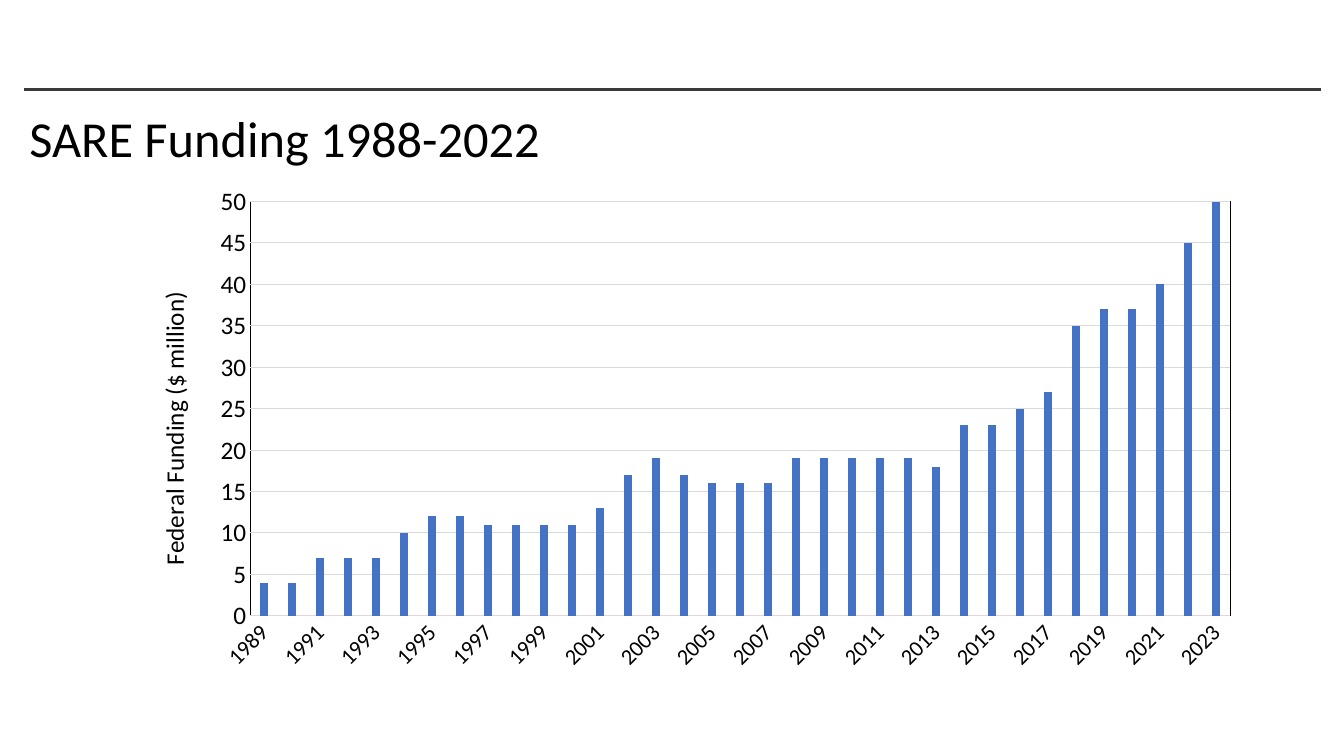
from dataclasses import dataclass

from lxml import etree
from pptx import Presentation
from pptx.chart.data import CategoryChartData
from pptx.dml.color import RGBColor
from pptx.enum.chart import XL_CHART_TYPE as ChartType, XL_TICK_MARK as TickMark
from pptx.enum.shapes import MSO_CONNECTOR as Connector
from pptx.enum.text import MSO_ANCHOR as Anchor, MSO_AUTO_SIZE as AutoSize, PP_ALIGN as Align
from pptx.oxml import parse_xml
from pptx.oxml.ns import nsdecls, qn
from pptx.util import Inches, Pt


@dataclass(frozen=True)
class Theme:
    font: str = "Calibri"
    ink: str = "000000"
    rule: str = "3B3838"
    grid: str = "D9D9D9"
    bar: str = "4472C4"
    title_size: int = 36
    axis_size: int = 18
    year_size: int = 16
    chart_size: int = 10
    thin: float = 0.75
    thick: float = 2.25


THEME = Theme()

CHART_WIDTH, CHART_HEIGHT = 11.08, 5.01
FIRST_YEAR = 1989
FUNDING = [
    4, 4, 7, 7, 7, 10, 12, 12, 11, 11, 11, 11,
    13, 17, 19, 17, 16, 16, 16, 19, 19, 19, 19, 19,
    18, 23, 23, 25, 27, 35, 37, 37, 40, 45, 50,
]


def style_font(font, size, color=THEME.ink, bold=False):
    font.name = THEME.font
    font.size = Pt(size)
    font.bold = bold
    font.color.rgb = RGBColor.from_string(color)


def style_line(line, color, width):
    line.color.rgb = RGBColor.from_string(color)
    line.width = Pt(width)


def write_text(frame, text, *, size, color=THEME.ink, align=None, spacing=None):
    para = frame.paragraphs[0]
    para.alignment = align
    para.line_spacing = spacing
    span = para.add_run()
    span.text = text
    style_font(span.font, size, color)


def add_rule(page, left, right, top):
    rule = page.shapes.add_connector(
        Connector.STRAIGHT, Inches(left), Inches(top), Inches(right), Inches(top))
    style_line(rule.line, THEME.rule, THEME.thick)
    etree.SubElement(rule._element.spPr, qn("a:effectLst"))


def add_title(page, text, left, top, width, height):
    title = page.shapes.title
    title.left, title.top = Inches(left), Inches(top)
    title.width, title.height = Inches(width), Inches(height)
    frame = title.text_frame
    frame.word_wrap = True
    frame.auto_size = AutoSize.NONE
    frame.vertical_anchor = Anchor.MIDDLE
    write_text(frame, text, size=THEME.title_size, align=Align.LEFT, spacing=0.9)


def manual_layout(target="", **places):
    """Build a chart layout from x, y, w and h in inches within the chart."""
    extent = {"x": CHART_WIDTH, "w": CHART_WIDTH, "y": CHART_HEIGHT, "h": CHART_HEIGHT}
    inner = f'<c:layoutTarget val="{target}"/>' if target else ""
    inner += "".join(f'<c:{key}Mode val="edge"/>' for key in "xy")
    inner += "".join(f'<c:{key} val="{value / extent[key]:.4f}"/>'
                     for key, value in places.items())
    return parse_xml(f'<c:layout {nsdecls("c")}><c:manualLayout>{inner}'
                     "</c:manualLayout></c:layout>")


def place_plot(chart):
    plot_area = chart._chartSpace.chart.plotArea
    for layout in plot_area.findall(qn("c:layout")):
        plot_area.remove(layout)
    plot_area.insert(0, manual_layout("inner", x=1.15, y=0.26, w=9.72, h=4.11))
    plot_area.append(parse_xml(
        f'<c:spPr {nsdecls("c", "a")}><a:noFill/><a:ln w="{Pt(THEME.thin)}"><a:solidFill>'
        f'<a:srgbClr val="{THEME.ink}"/></a:solidFill></a:ln></c:spPr>'))


def style_year_axis(axis):
    axis.major_tick_mark = axis.minor_tick_mark = TickMark.NONE
    style_line(axis.format.line, THEME.grid, THEME.thin)
    style_font(axis.tick_labels.font, THEME.year_size)
    # Slant the labels and show every second year
    axis._element.find(qn("c:txPr")).find(qn("a:bodyPr")).set("rot", "-2700000")
    skip = parse_xml(f'<c:tickLblSkip {nsdecls("c")} val="2"/>')
    axis._element.find(qn("c:noMultiLvlLbl")).addprevious(skip)


def style_value_axis(axis, title):
    axis.minimum_scale, axis.maximum_scale, axis.major_unit = 0, 50, 5
    axis.major_tick_mark = axis.minor_tick_mark = TickMark.NONE
    axis.format.line.fill.background()
    style_line(axis.major_gridlines.format.line, THEME.grid, THEME.thin)
    style_font(axis.tick_labels.font, THEME.axis_size)
    axis.tick_labels.number_format = "0"
    axis.tick_labels.number_format_is_linked = False
    # Rotated title at the left edge
    frame = axis.axis_title.text_frame
    write_text(frame, title, size=THEME.axis_size)
    frame._txBody.find(qn("a:bodyPr")).set("rot", "-5400000")
    element = axis.axis_title._element
    for layout in element.findall(qn("c:layout")):
        element.remove(layout)
    element.find(qn("c:tx")).addnext(manual_layout(x=0.18, y=1.11))


def add_funding_chart(page, left, top):
    data = CategoryChartData()
    data.categories = [str(FIRST_YEAR + step) for step in range(len(FUNDING))]
    data.add_series("Series 1", FUNDING)
    chart = page.shapes.add_chart(
        ChartType.COLUMN_CLUSTERED, Inches(left), Inches(top),
        Inches(CHART_WIDTH), Inches(CHART_HEIGHT), data).chart
    chart.has_title = chart.has_legend = False
    style_font(chart.font, THEME.chart_size)
    # Bars
    plot = chart.plots[0]
    plot.vary_by_categories = False
    plot.gap_width, plot.overlap = 219, -27
    fill = plot.series[0].format.fill
    fill.solid()
    fill.fore_color.rgb = RGBColor.from_string(THEME.bar)
    # Axes and frame
    style_year_axis(chart.category_axis)
    style_value_axis(chart.value_axis, "Federal Funding ($ million)")
    place_plot(chart)


def main():
    deck = Presentation()
    deck.slide_width, deck.slide_height = Inches(13.33), Inches(7.5)
    page = deck.slides.add_slide(deck.slide_layouts.get_by_name("Title Only"))
    add_rule(page, 0.24, 13.1, 0.89)
    add_title(page, "SARE Funding 1988-2022", 0.19, 0.93, 8.78, 0.94)
    add_funding_chart(page, 1.33, 1.74)
    deck.save("out.pptx")


if __name__ == "__main__":
    main()
